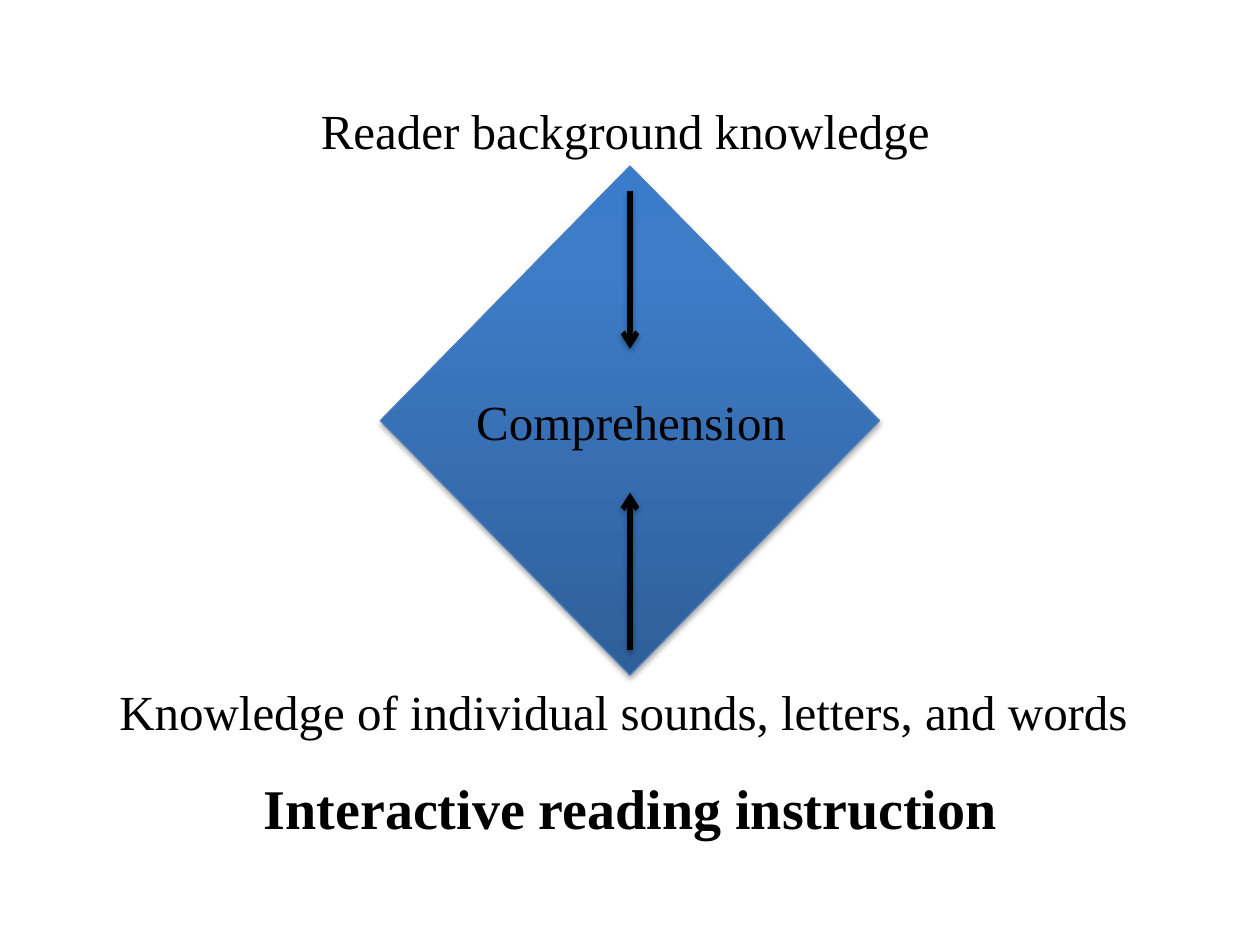
from pptx import Presentation
from pptx.dml.color import RGBColor
from pptx.enum.shapes import MSO_CONNECTOR, MSO_SHAPE
from pptx.enum.text import MSO_ANCHOR, PP_ALIGN
from pptx.oxml import parse_xml
from pptx.oxml.ns import nsdecls
from pptx.util import Cm, Pt

BLACK = RGBColor(0x00, 0x00, 0x00)
EDGE = RGBColor(0x4B, 0x7E, 0xBC)
# Position in percent, from the bottom of the diamond to its top
STOPS = [
    (0, RGBColor(0x2F, 0x5F, 0x99)),
    (80, RGBColor(0x3D, 0x7C, 0xC7)),
    (100, RGBColor(0x3A, 0x7C, 0xCB)),
]
FONT = "Times New Roman"

# Lengths are centimetres
WIDTH, HEIGHT = 25.4, 19.05
DIAMOND = (7.67, 3.35, 10.06, 10.26)
ARROW_X = WIDTH / 2
ARROW_INSET, ARROW_LENGTH = 0.5, 3.18

LABEL = {"size": Pt(28), "bold": False}
TITLE = {"size": Pt(32), "bold": True}
LEFT, CENTER = PP_ALIGN.LEFT, PP_ALIGN.CENTER
TOP, MIDDLE = MSO_ANCHOR.TOP, MSO_ANCHOR.MIDDLE
# text, box, font format, alignment, anchor, wrap
TEXTS = [
    ("Interactive reading instruction",
     (1.07, 15.04, 23.29, 2.46), TITLE, CENTER, MIDDLE, True),
    ("Knowledge of individual sounds, letters, and words",
     (2.08, 13.61, 20.98, 1.45), LABEL, CENTER, TOP, True),
    ("Reader background knowledge",
     (6.22, 1.9, 12.93, 1.45), LABEL, LEFT, TOP, False),
    ("Comprehension",
     (9.35, 7.77, 6.99, 1.45), LABEL, LEFT, TOP, True),
]


def add_shadow(sp, distance, opacity):
    """Give the shape a soft black shadow that falls straight down."""
    sp._element.spPr.append(parse_xml(
        f'<a:effectLst {nsdecls("a")}>'
        f'<a:outerShdw blurRad="{Pt(3.1)}" dist="{Pt(distance)}" '
        f'dir="5400000" rotWithShape="0"><a:srgbClr val="{BLACK}">'
        f'<a:alpha val="{opacity * 1000}"/></a:srgbClr>'
        '</a:outerShdw></a:effectLst>'))


def add_diamond(slide):
    sp = slide.shapes.add_shape(MSO_SHAPE.DIAMOND, *map(Cm, DIAMOND))
    sp.line.color.rgb = EDGE
    sp.line.width = Pt(0.75)
    stops = "".join(
        f'<a:gs pos="{pos * 1000}"><a:srgbClr val="{color}"/></a:gs>'
        for pos, color in STOPS)
    sp._element.spPr.prstGeom.addnext(parse_xml(
        f'<a:gradFill {nsdecls("a")} rotWithShape="1">'
        f'<a:gsLst>{stops}</a:gsLst>'
        '<a:lin ang="16200000" scaled="0"/></a:gradFill>'))
    add_shadow(sp, 1.8, 35)


def add_arrow(slide, start, end):
    """Draw a vertical arrow on the diamond's axis."""
    line = slide.shapes.add_connector(
        MSO_CONNECTOR.STRAIGHT, Cm(ARROW_X), Cm(start), Cm(ARROW_X), Cm(end))
    line.line.color.rgb = BLACK
    line.line.width = Pt(3)
    line.line._get_or_add_ln().append(
        parse_xml(f'<a:tailEnd {nsdecls("a")} type="arrow"/>'))
    add_shadow(line, 1.6, 38)


def add_text(slide, text, box, font, align, anchor, wrap):
    tf = slide.shapes.add_textbox(*map(Cm, box)).text_frame
    tf.word_wrap = wrap
    tf.vertical_anchor = anchor
    p = tf.paragraphs[0]
    p.alignment = align
    r = p.add_run()
    r.text = text
    r.font.name = FONT
    r.font.color.rgb = BLACK
    for name, value in font.items():
        setattr(r.font, name, value)


def main():
    prs = Presentation()
    prs.slide_width, prs.slide_height = Cm(WIDTH), Cm(HEIGHT)
    slide = prs.slides.add_slide(prs.slide_layouts[6])

    add_diamond(slide)
    for item in TEXTS:
        add_text(slide, *item)

    top = DIAMOND[1]
    bottom = top + DIAMOND[3]
    for tip, direction in ((bottom, -1), (top, 1)):
        start = tip + direction * ARROW_INSET
        add_arrow(slide, start, start + direction * ARROW_LENGTH)

    prs.save("out.pptx")


if __name__ == "__main__":
    main()
